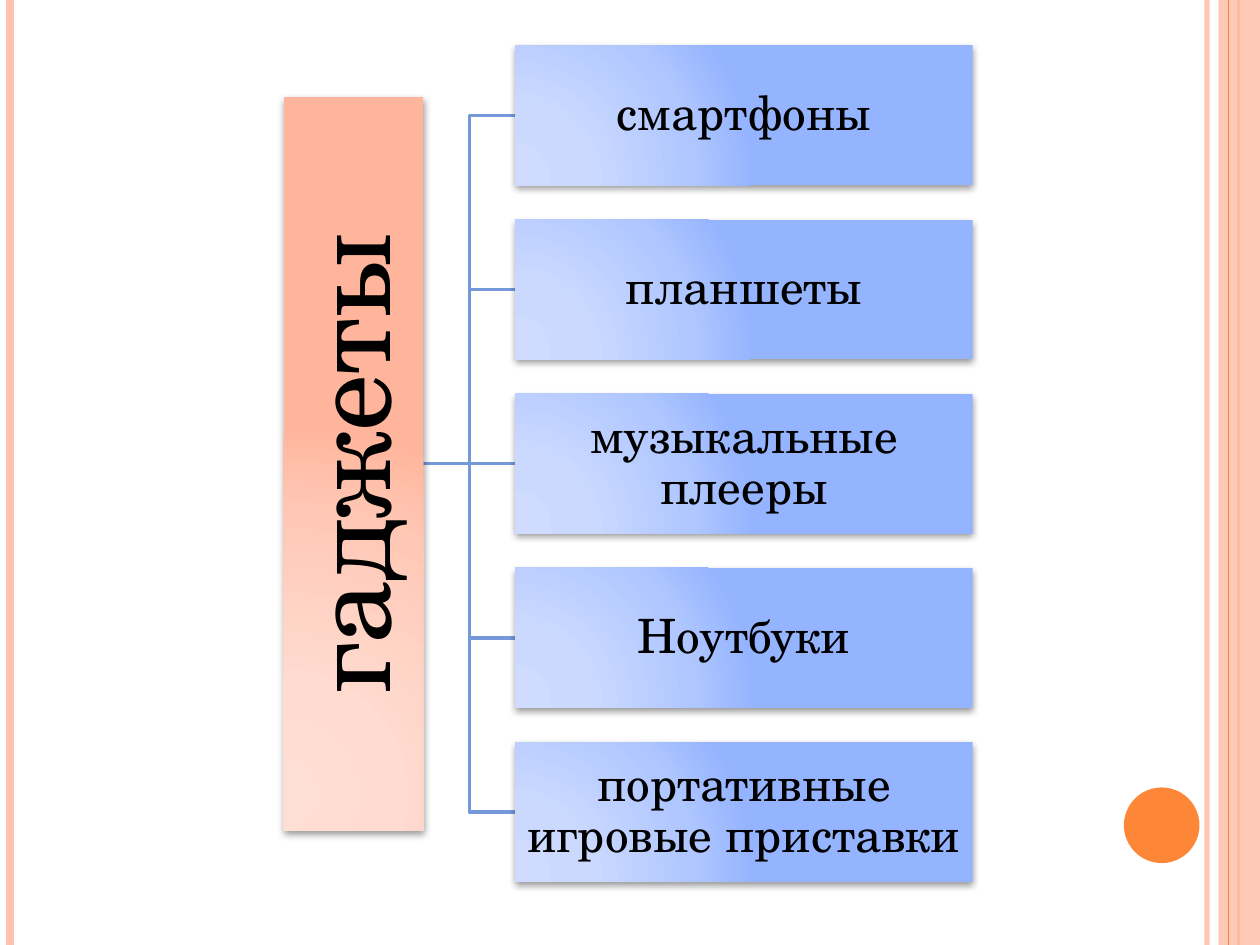
from lxml.etree import SubElement
from pptx import Presentation
from pptx.dml.color import RGBColor
from pptx.enum.shapes import MSO_CONNECTOR, MSO_SHAPE
from pptx.enum.text import MSO_ANCHOR, PP_ALIGN
from pptx.oxml import parse_xml
from pptx.oxml.ns import nsdecls, qn
from pptx.util import Inches, Pt

COLORS = {"peach": "FEC3AE", "orange": "FE8637", "link": "7598D9", "text": "000000"}
GRADIENTS = {
    "root": ["FFDED5", "FFDBD0", "FFC8B6", "FFB59B"],
    "item": ["CFDCFF", "CBD9FF", "AFC6FF", "95B4FF"],
}
STOPS = [0, 30, 75, 100]
FONT = "TeX Gyre Schola"
ITEMS = ["смартфоны", "планшеты", "музыкальные плееры", "Ноутбуки",
         "портативные игровые приставки"]


def rgb(name):
    """Return the named colour."""
    return RGBColor.from_string(COLORS[name])


def set_alpha(fill, percent):
    """Make a solid fill partly transparent."""
    color = fill._xPr.find(qn("a:solidFill"))[0]
    SubElement(color, qn("a:alpha"), val=str(percent * 1000))


def add_rule(slide, x, height, color, width, alpha=100):
    """Draw a full-height vertical rule."""
    s = slide.shapes.add_connector(
        MSO_CONNECTOR.STRAIGHT, Inches(x), 0, Inches(x), Inches(height))
    s.line.color.rgb = rgb(color)
    s.line.width = Pt(width)
    if alpha < 100:
        set_alpha(s.line.fill, alpha)
    SubElement(s._element.spPr, qn("a:effectLst"))


def add_solid(slide, kind, left, top, width, height, color):
    """Draw a plain filled shape without outline."""
    s = slide.shapes.add_shape(
        kind, Inches(left), Inches(top), Inches(width), Inches(height))
    s.shadow.inherit = False
    s.fill.solid()
    s.fill.fore_color.rgb = rgb(color)
    s.line.fill.background()
    return s


def add_frame(slide, width, height):
    """Draw the rules, side band and circle around the slide."""
    add_rule(slide, width - 0.42, height, "peach", 3, 93)
    add_rule(slide, 0.08, height, "peach", 4.5)
    add_rule(slide, width - 0.17, height, "orange", 1.5)
    band = add_solid(slide, MSO_SHAPE.RECTANGLE, width - 0.33, 0, 0.33, height, "peach")
    set_alpha(band.fill, 87)
    add_rule(slide, width - 0.25, height, "orange", 0.75)
    add_solid(slide, MSO_SHAPE.OVAL, width - 1.08, height - 1.25, 0.6, 0.6, "orange")


def add_box(slide, left, top, width, height, text, gradient, size, inset):
    """Draw a gradient box with a soft shadow and centred text."""
    s = slide.shapes.add_shape(
        MSO_SHAPE.RECTANGLE, Inches(left), Inches(top), Inches(width), Inches(height))
    s.line.fill.background()
    s.shadow.inherit = False
    stops = "".join(
        f'<a:gs pos="{pos * 1000}"><a:srgbClr val="{color}"/></a:gs>'
        for pos, color in zip(STOPS, GRADIENTS[gradient]))
    spPr = s._element.spPr
    spPr.find(qn("a:prstGeom")).addnext(parse_xml(
        f'<a:gradFill {nsdecls("a")} rotWithShape="1"><a:gsLst>{stops}</a:gsLst>'
        '<a:path path="circle"><a:fillToRect l="5000" t="100000" r="120000" b="10000"/>'
        '</a:path></a:gradFill>'))
    spPr.find(qn("a:effectLst")).append(parse_xml(
        f'<a:outerShdw {nsdecls("a")} blurRad="{Pt(4)}" dist="{Pt(2)}" dir="5400000" '
        'rotWithShape="0"><a:srgbClr val="000000"><a:alpha val="40000"/></a:srgbClr>'
        '</a:outerShdw>'))
    tf = s.text_frame
    tf.word_wrap = True
    tf.vertical_anchor = MSO_ANCHOR.MIDDLE
    tf.margin_left = tf.margin_right = tf.margin_top = tf.margin_bottom = Inches(inset)
    p = tf.paragraphs[0]
    p.text = text
    p.alignment = PP_ALIGN.CENTER
    p.line_spacing = 0.9
    p.font.name = FONT
    p.font.size = Pt(size)
    p.font.color.rgb = rgb("text")
    return s


def add_link(slide, x1, y1, x2, y2):
    """Draw an elbow link that turns halfway across."""
    middle = (x1 + x2) / 2
    points = [(middle, y1), (middle, y2), (x2, y2)] if y1 != y2 else [(x2, y2)]
    builder = slide.shapes.build_freeform(Inches(x1), Inches(y1))
    builder.add_line_segments([(Inches(x), Inches(y)) for x, y in points], close=False)
    s = builder.convert_to_shape()
    s.shadow.inherit = False
    s.fill.background()
    s.line.color.rgb = rgb("link")
    s.line.width = Pt(2)


def add_tree(slide, left, top, width, height, root, items):
    """Draw an upright root box linked to a column of item boxes."""
    box_height, item_width, root_length = 1.11, 3.63, 5.82
    step = (height - box_height) / (len(items) - 1)
    item_left = left + width - item_width
    center = top + height / 2
    tops = [top + i * step for i in range(len(items))]
    for y in reversed(tops):
        add_link(slide, left + box_height, center, item_left, y + box_height / 2)
    s = add_box(slide, left + (box_height - root_length) / 2, center - box_height / 2,
                root_length, box_height, root, "root", 65, 0.05)
    s.rotation = 270
    for y, item in zip(tops, items):
        add_box(slide, item_left, y, item_width, box_height, item, "item", 27, 0.02)


def main():
    """Build the slide and save it."""
    width, height = 10, 7.5
    prs = Presentation()
    prs.slide_width, prs.slide_height = Inches(width), Inches(height)
    slide = prs.slides.add_slide(prs.slide_layouts[6])
    add_frame(slide, width, height)
    add_tree(slide, 2.25, 0.36, 5.47, 6.64, "гаджеты", ITEMS)
    prs.save("out.pptx")


if __name__ == "__main__":
    main()
